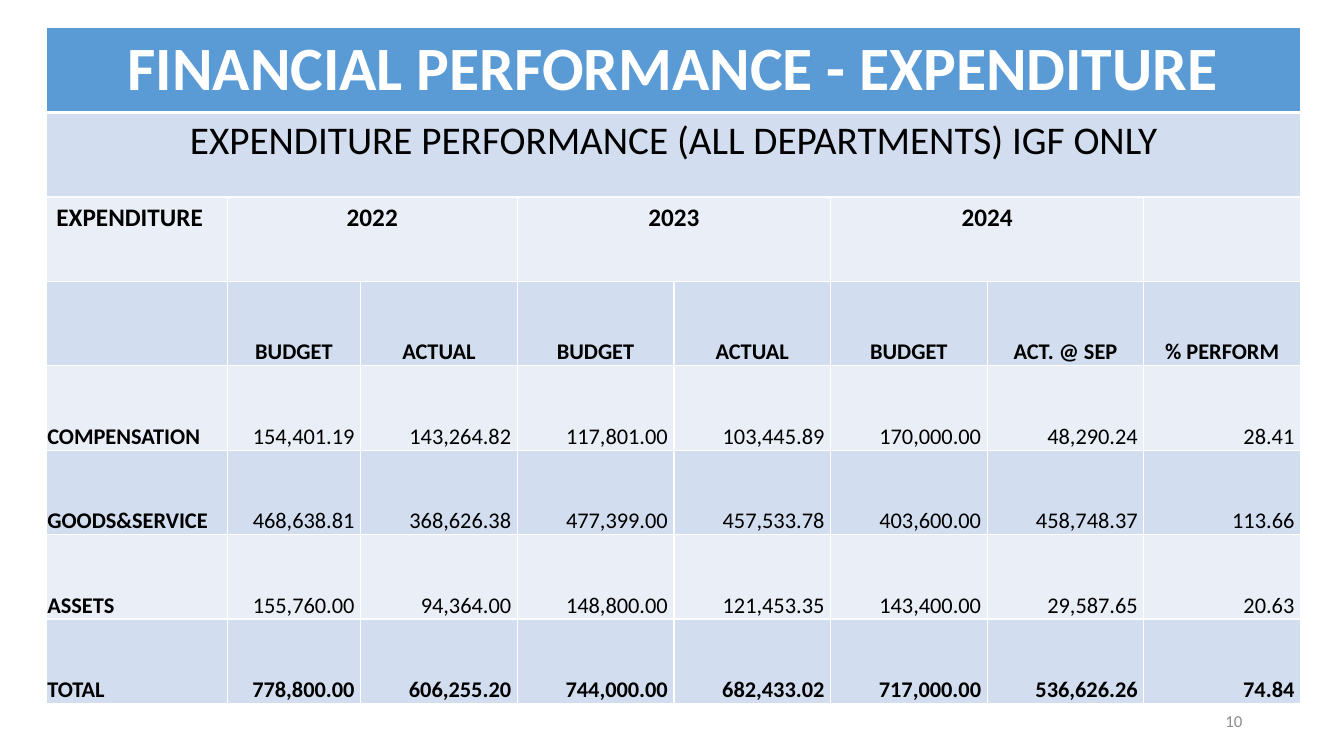
import dataclasses
import pptx
import pptx.dml.color
import pptx.enum.text
import pptx.oxml.ns
import pptx.util
from lxml import etree

ALIGN = pptx.enum.text.PP_ALIGN
ANCHOR = pptx.enum.text.MSO_ANCHOR


@dataclasses.dataclass(frozen=True)
class Theme:
    font: str = "Calibri"
    head: str = "5B9BD5"
    dark: str = "D2DEEF"
    light: str = "EAEFF7"
    white: str = "FFFFFF"
    black: str = "000000"
    gray: str = "8C8C8C"
    title: int = 44
    sub: int = 28
    year: int = 18
    body: int = 16
    small: int = 12


class Deck:
    def __init__(self, theme):
        self.theme = theme
        self.deck = pptx.Presentation()
        self.deck.slide_width = pptx.util.Inches(13.33)
        self.deck.slide_height = pptx.util.Inches(7.5)
        self.slide = self.deck.slides.add_slide(self.deck.slide_layouts[6])

    def color(self, code):
        return pptx.dml.color.RGBColor.from_string(code)

    def words(self, frame, text, size, align, color, bold=False):
        para = frame.paragraphs[0]
        para.text = text
        para.alignment = align
        para.font.name = self.theme.font
        para.font.size = pptx.util.Pt(size)
        para.font.bold = bold
        para.font.color.rgb = self.color(color)

    def label(self, box, text):
        shape = self.slide.shapes.add_textbox(*map(pptx.util.Inches, box))
        frame = shape.text_frame
        frame.word_wrap = True
        frame.vertical_anchor = ANCHOR.MIDDLE
        self.words(frame, text, self.theme.small, ALIGN.RIGHT, self.theme.gray)

    def grid(self, box, shares, rows):
        shape = self.slide.shapes.add_table(rows, len(shares), *map(pptx.util.Inches, box))
        table = shape.table
        table.first_row = False
        table.horz_banding = False
        for col, share in zip(table.columns, shares):
            col.width = pptx.util.Inches(box[2] * share / sum(shares))
        for row in range(rows):
            for cell in table.rows[row].cells:
                self.edge(cell, 3 if row == 0 else 1, 3 if row == 1 else 1)
                cell.fill.solid()
                band = self.theme.dark if row % 2 else self.theme.light
                cell.fill.fore_color.rgb = self.color(band if row else self.theme.head)
        return table

    def edge(self, cell, low, top):
        props = cell._tc.get_or_add_tcPr()
        qn = pptx.oxml.ns.qn
        for side, width in (("L", 1), ("R", 1), ("T", top), ("B", low)):
            line = etree.SubElement(props, qn(f"a:ln{side}"), w=str(pptx.util.Pt(width)))
            fill = etree.SubElement(line, qn("a:solidFill"))
            etree.SubElement(fill, qn("a:srgbClr"), val=self.theme.white)

    def band(self, table, row, first, last, text, size, color, bold):
        cell = table.cell(row, first)
        cell.merge(table.cell(row, last))
        self.words(cell.text_frame, text, size, ALIGN.CENTER, color, bold)

    def entry(self, cell, text, align, bold):
        cell.vertical_anchor = ANCHOR.BOTTOM
        cell.margin_left = cell.margin_top = pptx.util.Inches(0.01)
        cell.margin_right = pptx.util.Inches(0.06 if align == ALIGN.RIGHT else 0.01)
        cell.margin_bottom = 0
        self.words(cell.text_frame, text, self.theme.body, align, self.theme.black, bold)


HEADS = ["BUDGET", "ACTUAL", "BUDGET", "ACTUAL", "BUDGET", "ACT. @ SEP", "% PERFORM"]
ROWS = [
    ["COMPENSATION", "154,401.19", "143,264.82", "117,801.00", "103,445.89",
     "170,000.00", "48,290.24", "28.41"],
    ["GOODS&SERVICE", "468,638.81", "368,626.38", "477,399.00", "457,533.78",
     "403,600.00", "458,748.37", "113.66"],
    ["ASSETS", "155,760.00", "94,364.00", "148,800.00", "121,453.35",
     "143,400.00", "29,587.65", "20.63"],
    ["TOTAL", "778,800.00", "606,255.20", "744,000.00", "682,433.02",
     "717,000.00", "536,626.26", "74.84"],
]


def main():
    theme = Theme()
    deck = Deck(theme)
    table = deck.grid((0.46, 0.27, 12.44, 6.7), [1.79, 1.32] + [1.55] * 6, 8)
    deck.band(table, 0, 0, 7, "FINANCIAL PERFORMANCE - EXPENDITURE",
              theme.title, theme.white, True)
    deck.band(table, 1, 0, 7, "EXPENDITURE PERFORMANCE (ALL DEPARTMENTS) IGF ONLY",
              theme.sub, theme.black, False)
    deck.words(table.cell(2, 0).text_frame, "EXPENDITURE", theme.year,
               ALIGN.LEFT, theme.black, True)
    for col, year in zip((1, 3, 5), ("2022", "2023", "2024")):
        deck.band(table, 2, col, col + 1, year, theme.year, theme.black, True)
    for col, head in enumerate(HEADS, 1):
        deck.entry(table.cell(3, col), head, ALIGN.CENTER, True)
    for row, (name, *sums) in enumerate(ROWS, 4):
        deck.entry(table.cell(row, 0), name, ALIGN.LEFT, True)
        for col, value in enumerate(sums, 1):
            deck.entry(table.cell(row, col), value, ALIGN.RIGHT, name == "TOTAL")
    deck.label((9.42, 6.95, 3, 0.4), "10")
    deck.deck.save("out.pptx")


if __name__ == "__main__":
    main()
